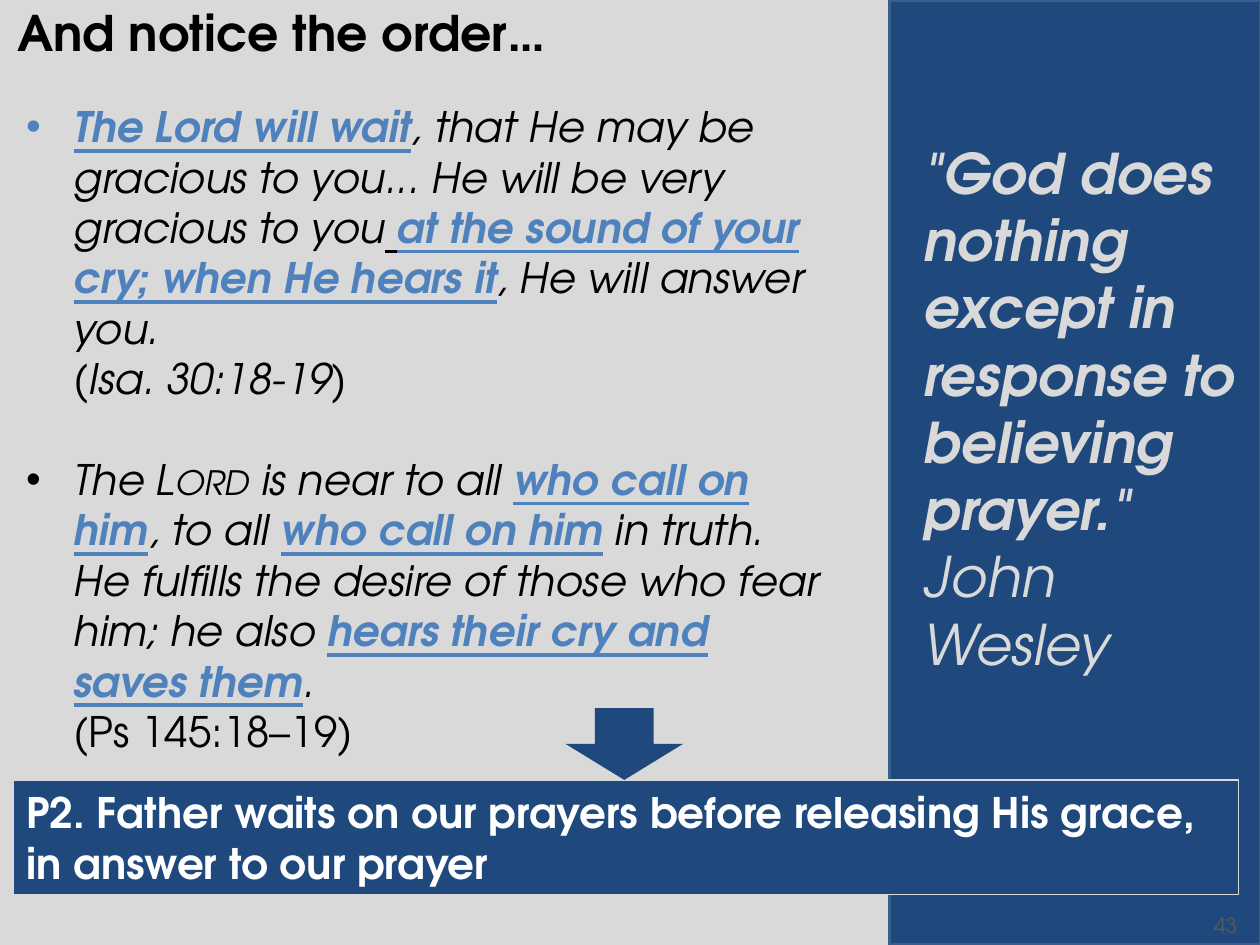
from lxml import etree
from pptx import Presentation
from pptx.dml.color import RGBColor
from pptx.enum.shapes import MSO_SHAPE
from pptx.enum.text import MSO_ANCHOR, PP_ALIGN
from pptx.oxml.ns import qn
from pptx.util import Pt

RECT, ARROW = MSO_SHAPE.RECTANGLE, MSO_SHAPE.DOWN_ARROW
TOP, MIDDLE = MSO_ANCHOR.TOP, MSO_ANCHOR.MIDDLE
LEFT, RIGHT = PP_ALIGN.LEFT, PP_ALIGN.RIGHT
FACE = "TeX Gyre Adventor"
NAVY, BLUE, EDGE = "1F497D", "4F81BD", "3A5F8C"
PALE, BLACK, WHITE, GRAY = "D9D9D9", "000000", "FFFFFF", "595959"

PLAIN = {"size": Pt(24), "name": FACE, "color": BLACK}
SLANT = {**PLAIN, "italic": True}
GAP = {**SLANT, "bold": True, "underline": True}
KEY = {**GAP, "color": BLUE}
SMALL = {**SLANT, "cap": "small"}
HEAD = {**PLAIN, "size": Pt(28), "bold": True}
CLAIM = {**PLAIN, "bold": True, "color": WHITE}
NAME = {**SLANT, "size": Pt(32), "color": PALE}
QUOTE = {**NAME, "bold": True}
PAGE = {**PLAIN, "size": Pt(12), "color": GRAY}

VERSES = [
    [("The Lord will wait", KEY),
     (", that He may be gracious to you... He will be very gracious to you", SLANT),
     (" ", GAP), ("at the sound of your cry; when He hears it", KEY),
     (", He will answer you.\n", SLANT), ("(", PLAIN), ("Isa. 30:18-19)", SLANT)],
    [("The ", SLANT), ("Lord", SMALL), (" is near to all ", SLANT),
     ("who call on him", KEY), (", to all ", SLANT), ("who call on him", KEY),
     (" in truth. He fulfills the desire of those who fear him; he also ", SLANT),
     ("hears their cry and saves them", KEY), (".\n", SLANT),
     ("(Ps 145:18–19)", PLAIN)],
]


def color(code):
    """Turn a hex string into a colour."""
    return RGBColor.from_string(code)


def write(para, parts):
    """Add formatted runs to a paragraph, with newlines as line breaks."""
    for text, style in parts:
        for i, piece in enumerate(text.split("\n")):
            if i:
                para.add_line_break()
            if not piece:
                continue
            run = para.add_run()
            run.text = piece
            for key, value in style.items():
                if key == "color":
                    run.font.color.rgb = color(value)
                elif key == "cap":
                    run._r.get_or_add_rPr().set(key, value)
                else:
                    setattr(run.font, key, value)


def fill_text(shape, paras, anchor=TOP, align=LEFT):
    """Fill a shape with paragraphs and return them."""
    frame = shape.text_frame
    frame.word_wrap = True
    frame.vertical_anchor = anchor
    for i, parts in enumerate(paras):
        para = frame.add_paragraph() if i else frame.paragraphs[0]
        para.alignment = align
        write(para, parts)
    return frame.paragraphs


def add_text(slide, box, paras, align=LEFT):
    """Add a text box and return its paragraphs."""
    shape = slide.shapes.add_textbox(*map(Pt, box))
    return fill_text(shape, paras, TOP, align)


def add_block(slide, kind, box, edge=None, width=0):
    """Add a navy shape with an optional outline."""
    shape = slide.shapes.add_shape(kind, *map(Pt, box))
    shape.shadow.inherit = False
    shape.fill.solid()
    shape.fill.fore_color.rgb = color(NAVY)
    if edge:
        shape.line.color.rgb = color(edge)
        shape.line.width = Pt(width)
    else:
        shape.line.fill.background()
    return shape


def add_panel(slide, box):
    """Draw the side panel."""
    add_block(slide, RECT, box, EDGE, 2)


def add_quote(slide, box):
    """Place the quotation and its speaker on the panel."""
    left, top, width, height = box
    words = '"God does nothing except in response to believing prayer."\n'
    add_text(slide, (left + 12.24, top + 75.6, width - 8.64, height - 222.48),
             [[(words, QUOTE), ("John Wesley", NAME)]])


def add_verses(slide, box):
    """Place the bulleted verses, one line apart."""
    for i, para in enumerate(add_text(slide, box, VERSES)):
        props = para._p.get_or_add_pPr()
        props.set("marL", str(Pt(27)))
        props.set("indent", str(Pt(-27)))
        if i:
            para.space_before = Pt(28.8)
        etree.SubElement(props, qn("a:buFont")).set("typeface", "Arial")
        etree.SubElement(props, qn("a:buChar")).set("char", "•")


def add_claim(slide, box):
    """Draw the claim bar and the arrow standing on it."""
    left, top = box[:2]
    bar = add_block(slide, RECT, box, PALE, 0.75)
    words = ("P2. Father waits on our prayers before releasing His grace, "
             "in answer to our prayer")
    fill_text(bar, [[(words, CLAIM)]], MIDDLE)
    add_block(slide, ARROW, (left + 315.36, top - 41.04, 66.96, 41.04))


def main():
    """Build and save the slide."""
    deck = Presentation()
    deck.slide_width, deck.slide_height = Pt(720), Pt(540)
    slide = deck.slides.add_slide(deck.slide_layouts[6])
    slide.background.fill.solid()
    slide.background.fill.fore_color.rgb = color(PALE)
    side = (508.32, 0, 212.4, 540)
    add_panel(slide, side)
    add_verses(slide, (7.92, 54, 474.48, 414.72))
    add_claim(slide, (7.92, 445.68, 699.84, 65.52))
    add_text(slide, (2.88, -2.16, 691.92, 51.12), [[("And notice the order…", HEAD)]])
    add_quote(slide, side)
    add_text(slide, (654, 518, 60, 22), [[("43", PAGE)]], RIGHT)
    deck.save("out.pptx")


if __name__ == "__main__":
    main()
